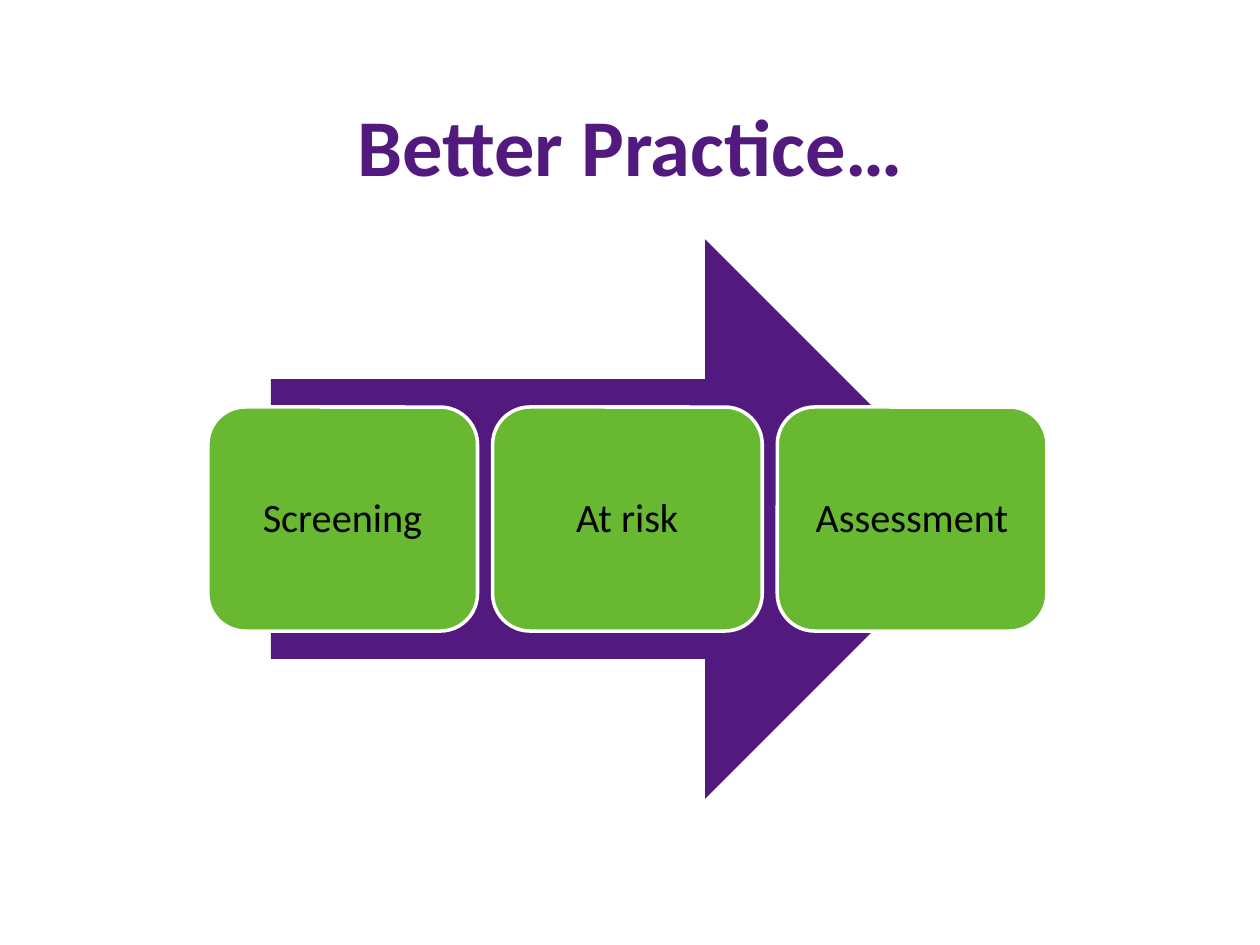
from pptx import Presentation
from pptx.dml.color import RGBColor
from pptx.enum import shapes, text
from pptx.util import Pt

COLORS = {"purple": "52197E", "green": "68B832", "white": "FFFFFF", "black": "000000"}
COLORS = {name: RGBColor.from_string(value) for name, value in COLORS.items()}

deck = Presentation()
deck.slide_width, deck.slide_height = Pt(720), Pt(540)
page = deck.slides.add_slide(deck.slide_layouts[5])

# Title
title = page.shapes.title
title.left, title.top, title.width, title.height = Pt(43.2), Pt(8.64), Pt(633.6), Pt(105.12)
title.text_frame.text = "Better Practice…"
title.text_frame.vertical_anchor = text.MSO_ANCHOR.BOTTOM
para = title.text_frame.paragraphs[0]
para.alignment = text.PP_ALIGN.CENTER
para.font.name, para.font.size, para.font.bold = "Calibri", Pt(46), True
para.font.color.rgb = COLORS["purple"]

# Arrow behind the steps
arrow = page.shapes.add_shape(
    shapes.MSO_SHAPE.RIGHT_ARROW, Pt(154.8), Pt(136.8), Pt(408), Pt(319.7))
arrow.shadow.inherit = False
arrow.fill.solid()
arrow.fill.fore_color.rgb = COLORS["purple"]
arrow.line.fill.background()

# Steps, evenly spaced from left to right
for index, label in enumerate(["Screening", "At risk", "Assessment"]):
    box = page.shapes.add_shape(
        shapes.MSO_SHAPE.ROUNDED_RECTANGLE,
        Pt(118.8 + index * 162.7), Pt(232.6), Pt(154.1), Pt(128))
    box.shadow.inherit = False
    box.fill.solid()
    box.fill.fore_color.rgb = COLORS["green"]
    box.line.color.rgb = COLORS["white"]
    box.line.width = Pt(2)

    frame = box.text_frame
    frame.text = label
    frame.word_wrap = True
    frame.vertical_anchor = text.MSO_ANCHOR.MIDDLE
    para = frame.paragraphs[0]
    para.alignment = text.PP_ALIGN.CENTER
    para.line_spacing = 0.9
    para.font.name, para.font.size = "Calibri", Pt(23)
    para.font.color.rgb = COLORS["black"]

deck.save("out.pptx")
